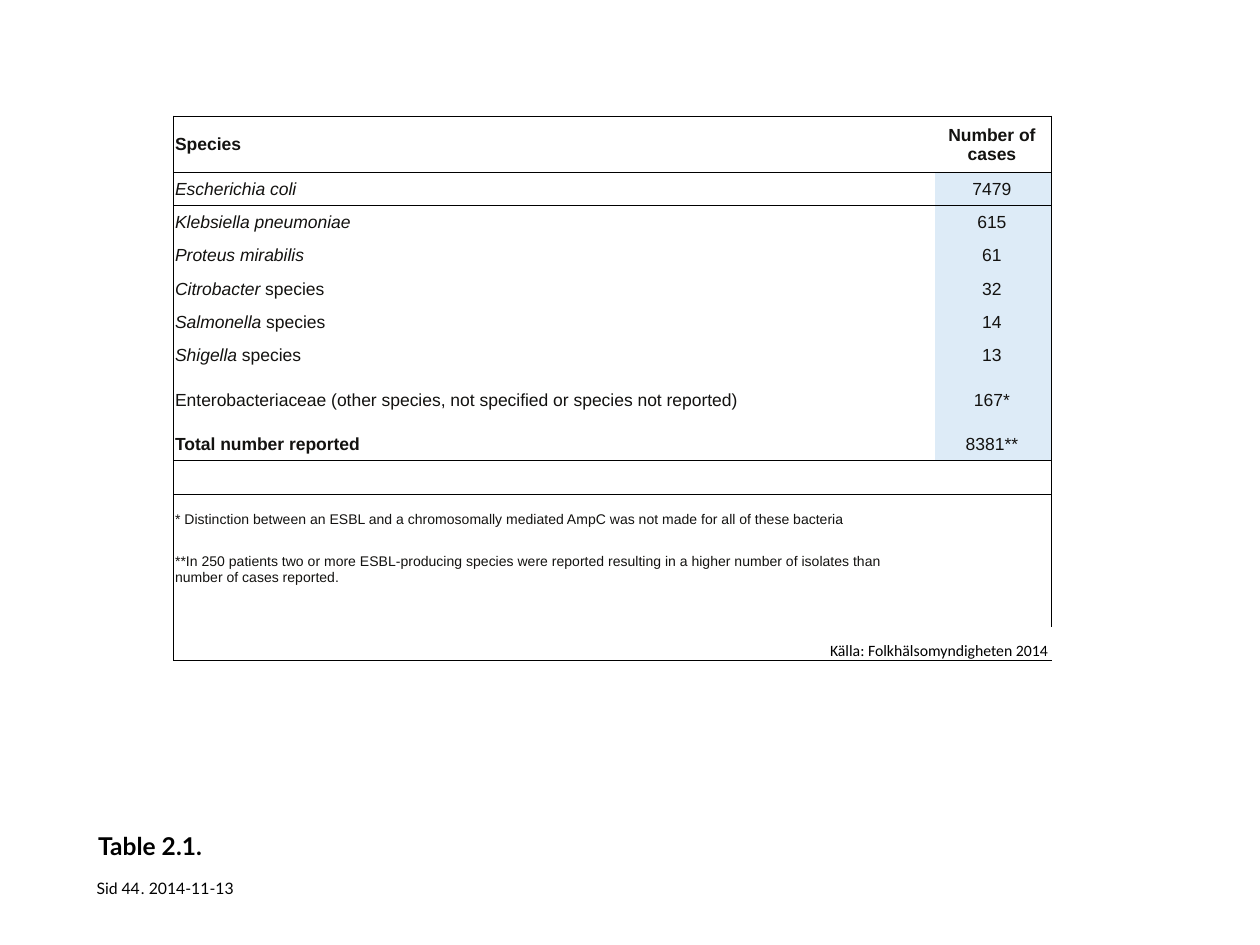
from lxml.etree import SubElement
from pptx import Presentation
from pptx.dml.color import RGBColor as RGB
from pptx.enum.text import MSO_ANCHOR as Anchor, PP_ALIGN as Align
from pptx.oxml.ns import qn
from pptx.util import Cm, Pt

BLACK = RGB(0, 0, 0)
INK = RGB(0x13, 0x12, 0x10)
BLUE = RGB(0xDD, 0xEB, 0xF7)
PLAIN_STYLE = "{2D5ABB26-0587-4C30-8999-92F81FD0307C}"

SHORT, NOTE, TALL = 0.67, 1.01, 1.13
# Row height, italic part, upright part, count
SPECIES = [
    (SHORT, "Escherichia coli", "", "7479"),
    (SHORT, "Klebsiella pneumoniae", "", "615"),
    (SHORT, "Proteus mirabilis", "", "61"),
    (SHORT, "Citrobacter ", "species", "32"),
    (SHORT, "Salmonella ", "species", "14"),
    (SHORT, "Shigella ", "species", "13"),
    (TALL, "", "Enterobacteriaceae (other species, not specified "
     "or species not reported)", "167*"),
]
NOTES = [
    "* Distinction between an ESBL and a chromosomally mediated AmpC "
    "was not made for all of these bacteria",
    "**In 250 patients two or more ESBL-producing species were reported "
    "resulting in a higher number of isolates than number of cases reported.",
]
SOURCE = "Källa: Folkhälsomyndigheten 2014"


def write(frame, text, size=10, face="Arial", color=INK, bold=False,
          italic=False, align=Align.LEFT):
    """Add a run to the first paragraph of a frame."""
    para = frame.paragraphs[0]
    para.alignment = align
    run = para.add_run()
    run.text = text
    font = run.font
    font.size, font.name = Pt(size), face
    font.bold, font.italic = bold, italic
    font.color.rgb = color


def trim(frame, anchor=Anchor.BOTTOM):
    frame.margin_left = frame.margin_right = 0
    frame.margin_top = frame.margin_bottom = 0
    frame.vertical_anchor = anchor


def add_label(slide, left, width, text, align=Align.LEFT):
    box = slide.shapes.add_textbox(Cm(left), Cm(17.6), Cm(width), Cm(0.5))
    trim(box.text_frame)
    box.text_frame.word_wrap = False
    write(box.text_frame, text, 9, "Lato", BLACK, align=align)


def rule(cell, sides):
    """Draw thin borders; sides must keep the order L, R, T, B."""
    props = cell._tc.get_or_add_tcPr()
    for side in sides:
        line = SubElement(props, qn(f"a:ln{side}"), w=str(Pt(0.5)))
        fill = SubElement(line, qn("a:solidFill"))
        SubElement(fill, qn("a:srgbClr"), val=str(BLACK))


def style(cell, sides, fill=None):
    cell.margin_left, cell.margin_right = Cm(0.03), Cm(0.08)
    cell.margin_top, cell.margin_bottom = Cm(0.03), 0
    cell.vertical_anchor = Anchor.MIDDLE
    rule(cell, sides)
    if fill is None:
        cell.fill.background()
    else:
        cell.fill.solid()
        cell.fill.fore_color.rgb = fill


def set_grid(table, total):
    """Size the rows, then frame the table and rule off head and total."""
    heights = ([TALL] + [row[0] for row in SPECIES]
               + [SHORT, SHORT, NOTE, NOTE, SHORT, SHORT])
    last = len(heights) - 1
    for col, width in zip(table.columns, (15.34, 2.36)):
        col.width = Cm(width)
    for i, height in enumerate(heights):
        table.rows[i].height = Cm(height)
        ends = "T" if i in (0, 1, total + 1) else ""
        ends += "B" if i in (0, total, last) else ""
        style(table.cell(i, 0), "L" + ends)
        style(table.cell(i, 1), "R" + ends, BLUE if 1 <= i <= total else None)
    table.cell(last, 0).merge(table.cell(last, 1))
    table.cell(last, 0).vertical_anchor = Anchor.BOTTOM


def add_cases(slide):
    total = len(SPECIES) + 1
    count = total + 6
    shape = slide.shapes.add_table(count, 2, Cm(3.5), Cm(2.34),
                                   Cm(17.7), Cm(10.98))
    table = shape.table
    table.first_row = table.horz_banding = False
    table._tbl.tblPr.find(qn("a:tableStyleId")).text = PLAIN_STYLE
    set_grid(table, total)

    def put(row, col, text, **form):
        write(table.cell(row, col).text_frame, text, **form)

    put(0, 0, "Species", bold=True)
    put(0, 1, "Number of cases", bold=True, align=Align.CENTER)
    for i, (_, name, rest, cases) in enumerate(SPECIES, 1):
        if name:
            put(i, 0, name, italic=True)
        if rest:
            put(i, 0, rest)
        put(i, 1, cases, align=Align.CENTER)
    put(total, 0, "Total number reported", bold=True)
    put(total, 1, "8381**", align=Align.CENTER)
    for i, note in enumerate(NOTES, total + 2):
        put(i, 0, note, size=8)
    put(count - 1, 0, SOURCE, size=9, face="Calibri", color=BLACK,
        align=Align.RIGHT)

    # Empty cells need a small font, or they stretch their rows
    for cell in table.iter_cells():
        if not cell.text:
            para = cell.text_frame.paragraphs[0]._p
            SubElement(para, qn("a:endParaRPr"), sz="800")


def add_title(slide, text):
    title = slide.shapes.title
    title.left, title.top = Cm(1.98), Cm(16.2)
    title.width, title.height = Cm(8.13), Cm(1.14)
    trim(title.text_frame)
    write(title.text_frame, text, 14, "Lato", BLACK, bold=True)
    title.text_frame.paragraphs[0].line_spacing = Pt(34)


def main():
    deck = Presentation()
    deck.slide_width, deck.slide_height = Cm(25.4), Cm(19.05)
    slide = deck.slides.add_slide(deck.slide_layouts[5])
    add_label(slide, 1.95, 0.43, "Sid")
    add_label(slide, 1.98, 0.84, "44", Align.RIGHT)
    add_label(slide, 2.84, 0.1, ".")
    add_label(slide, 3, 2.18, "2014-11-13")
    add_cases(slide)
    add_title(slide, "Table 2.1.")
    deck.save("out.pptx")


if __name__ == "__main__":
    main()
